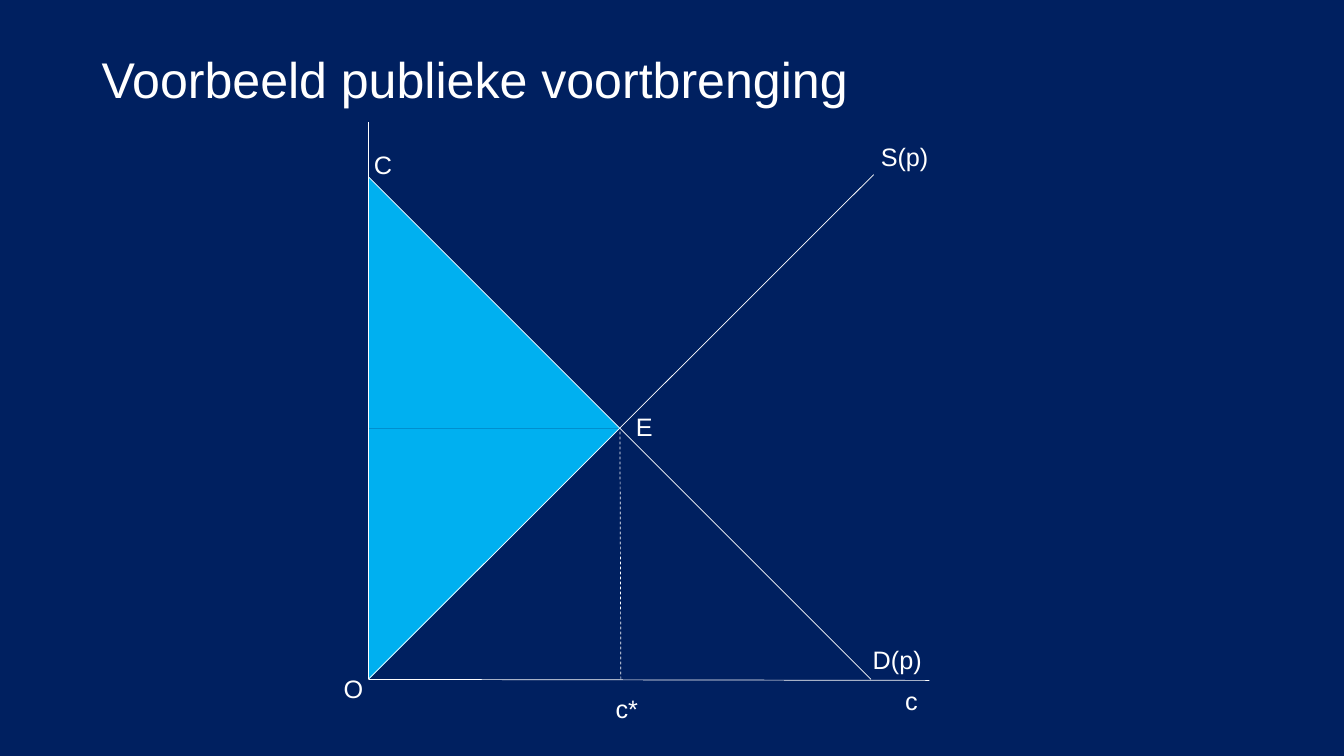
from dataclasses import dataclass

import pptx
import pptx.dml.color
import pptx.enum.dml
import pptx.enum.shapes
import pptx.enum.text
import pptx.oxml
import pptx.util

Pt = pptx.util.Pt
RGB = pptx.dml.color.RGBColor


@dataclass(frozen=True)
class Theme:
    background: RGB = RGB.from_string("002060")
    ink: RGB = RGB.from_string("FFFFFF")
    surplus: RGB = RGB.from_string("00B0F0")
    font: str = "Arial"
    title_size: float = 35.8
    label_size: float = 18
    line_width: float = 0.5


THEME = Theme()


def add_text(s, text, x, y, w, h, size, wrap=True):
    sp = s.shapes.add_textbox(Pt(x), Pt(y), Pt(w), Pt(h))
    tf = sp.text_frame
    tf.word_wrap = wrap
    p = tf.paragraphs[0]
    p.text = text
    p.font.name = THEME.font
    p.font.size = Pt(size)
    p.font.color.rgb = THEME.ink
    return tf


def add_line(s, x1, y1, x2, y2, dashed=False):
    line = s.shapes.add_connector(
        pptx.enum.shapes.MSO_CONNECTOR.STRAIGHT, Pt(x1), Pt(y1), Pt(x2), Pt(y2))
    line.line.color.rgb = THEME.ink
    line.line.width = Pt(THEME.line_width)
    if dashed:
        line.line.dash_style = pptx.enum.dml.MSO_LINE.DASH
    line._element.spPr.append(pptx.oxml.parse_xml(
        '<a:effectLst xmlns:a="http://schemas.openxmlformats.org/drawingml/2006/main"/>'))


def add_title(s, text, x, y, w, h):
    tf = add_text(s, text, x, y, w, h, THEME.title_size)
    tf.vertical_anchor = pptx.enum.text.MSO_ANCHOR.MIDDLE
    tf.paragraphs[0].line_spacing = 0.9


def add_market_diagram(s, x, y, size):
    half = size / 2
    for top, rotation in ((y, 0), (y + half, 90)):
        sp = s.shapes.add_shape(pptx.enum.shapes.MSO_SHAPE.RIGHT_TRIANGLE,
                                Pt(x), Pt(top), Pt(half), Pt(half))
        sp.rotation = rotation
        sp.shadow.inherit = False
        sp.fill.solid()
        sp.fill.fore_color.rgb = THEME.surplus
        sp.line.fill.background()

    bottom = y + size
    add_line(s, x - 0.5, y - 39.5, x - 0.5, bottom)
    add_line(s, x + size + 41.8, bottom + 0.7, x, bottom)
    add_line(s, x, y, x + size, bottom)
    add_line(s, x - 0.5, bottom, x + size + 2, y - 2)
    add_line(s, x + half + 0.7, bottom, x + half, y + half + 1, dashed=True)

    labels = (
        ("c", size + 17.3, size + 0.7, 22.3, True),
        ("S(p)", size, -29.5, 57.6, True),
        ("D(p)", size - 5.8, size - 28.8, 56.2, True),
        ("O", -25.2, size - 7.9, 28.8, False),
        ("E", half + 4.3, half - 15.8, 26.6, False),
        ("C", -3.6, -23.7, 27.4, False),
        ("c*", half - 10.1, size + 6.5, 33.1, True),
    )
    for text, dx, dy, w, wrap in labels:
        add_text(s, text, x + dx, y + dy, w, 29, THEME.label_size, wrap)


def main():
    prs = pptx.Presentation()
    prs.slide_width, prs.slide_height = Pt(960), Pt(540)
    s = prs.slides.add_slide(prs.slide_layouts[6])
    s.background.fill.solid()
    s.background.fill.fore_color.rgb = THEME.background
    add_market_diagram(s, 263.5, 126.7, 358.6)
    add_title(s, "Voorbeeld publieke voortbrenging", 65.5, 6.5, 828, 104.4)
    prs.save("out.pptx")


if __name__ == "__main__":
    main()
